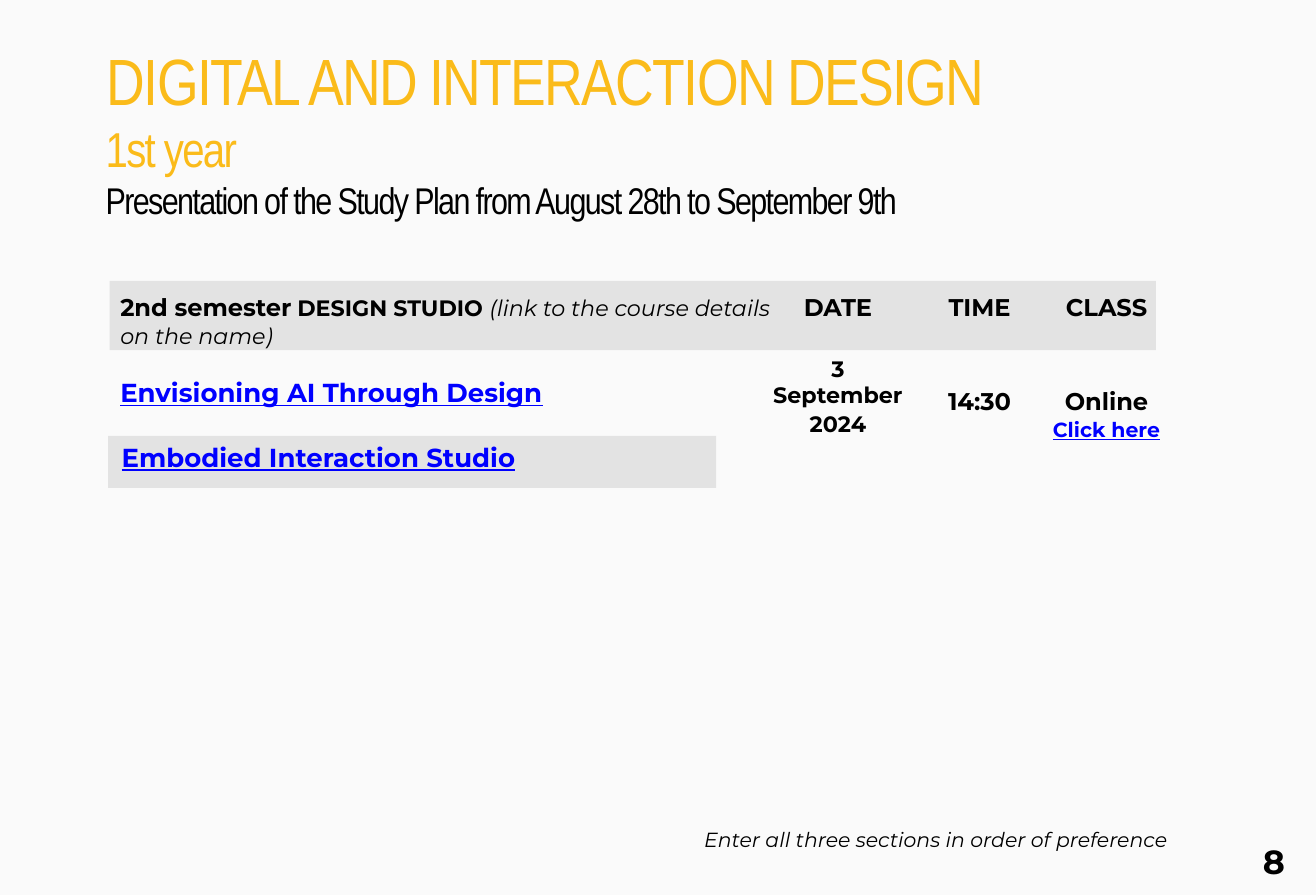
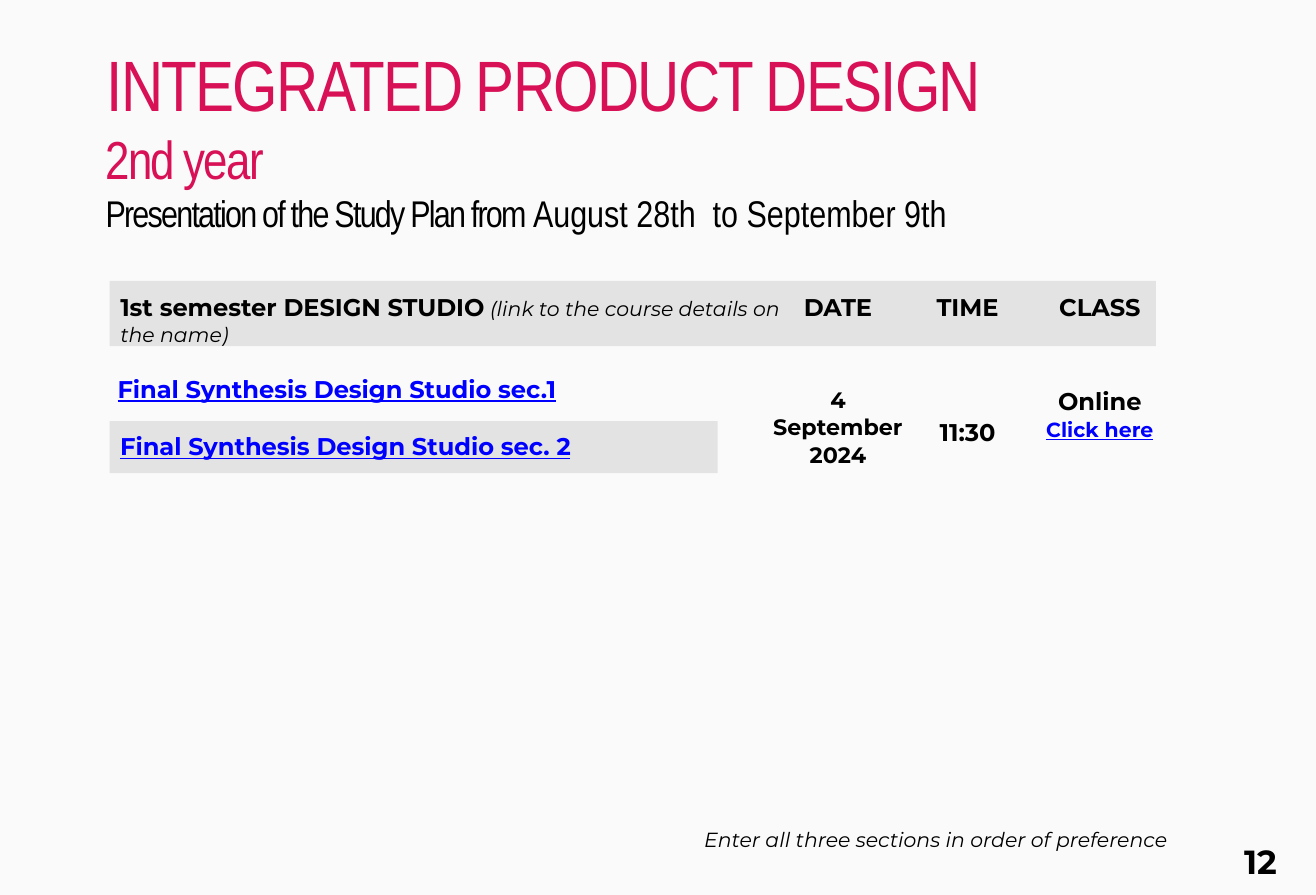
from copy import deepcopy
from dataclasses import dataclass

from pptx import Presentation
from pptx.dml.color import RGBColor
from pptx.enum.shapes import MSO_SHAPE
from pptx.enum.text import MSO_ANCHOR, MSO_AUTO_SIZE, PP_ALIGN
from pptx.util import Inches, Pt

RECT = MSO_SHAPE.RECTANGLE
TOP = MSO_ANCHOR.TOP
FIXED = MSO_AUTO_SIZE.NONE
LEFT, MID, RIGHT = PP_ALIGN.LEFT, PP_ALIGN.CENTER, PP_ALIGN.RIGHT

# Shared look
PAPER, BAND, INK, LINK = "FAFAFA", "E3E3E3", "000000", "0000FF"
HEAD, BODY = "Arial Narrow", "Montserrat"
WIDE, HIGH = 709 / 72, 482 / 72  # slide size, from whole points
ROW = 16.85  # height of one empty table line, in points


@dataclass
class Run:
    text: str
    size: float
    color: str = INK
    bold: bool = False
    slant: bool = False
    under: bool = False
    face: str = BODY
    track: float = 0
    wrap: bool = False  # a line break follows


@dataclass
class Para:
    runs: list[Run]
    align: PP_ALIGN = LEFT
    before: float = 1
    indent: float = 0


@dataclass
class Box:
    x: float
    y: float
    w: float
    h: float


@dataclass
class Course:
    name: str
    box: Box


@dataclass
class Page:
    title: Para
    bands: list[Box]
    label: list[Run]
    width: float  # of the label
    courses: list[Course]
    size: float  # of the course names
    date: str
    skip: int  # empty lines above the date
    time: str
    wait: int  # empty lines above the time
    time_x: float
    class_x: float
    number: str
    num_x: float


def rgb(code: str) -> RGBColor:
    return RGBColor.from_string(code)


def style(font, run: Run) -> None:
    font.name, font.size = run.face, Pt(run.size)
    font.bold, font.italic, font.underline = run.bold, run.slant, run.under
    font.color.rgb = rgb(run.color)


def write(frame, paras: list[Para]) -> None:
    frame.word_wrap = True
    frame.auto_size = FIXED
    frame.vertical_anchor = TOP
    frame.margin_left = frame.margin_right = 0
    frame.margin_top = frame.margin_bottom = 0
    for i, para in enumerate(paras):
        line = frame.add_paragraph() if i else frame.paragraphs[0]
        line.alignment, line.space_before = para.align, Pt(para.before)
        if para.indent:
            line._p.get_or_add_pPr().set("indent", str(Inches(para.indent)))
        for run in para.runs:
            part = line.add_run()
            part.text = run.text
            style(line.font if len(para.runs) == 1 else part.font, run)
            props = part._r.get_or_add_rPr()
            if run.track:
                props.set("spc", str(round(run.track * 100)))
            if run.wrap:  # the break keeps the size of its line
                line._p.add_br().append(deepcopy(props))


def place(shape, box: Box) -> None:
    shape.left, shape.top = Inches(box.x), Inches(box.y)
    shape.width, shape.height = Inches(box.w), Inches(box.h)


def add_text(slide, box: Box, paras: list[Para]) -> None:
    shape = slide.shapes.add_textbox(0, 0, 0, 0)
    place(shape, box)
    write(shape.text_frame, paras)


def add_band(slide, box: Box) -> None:
    band = slide.shapes.add_shape(RECT, 0, 0, 0, 0)
    place(band, box)
    band.shadow.inherit = False
    band.fill.solid()
    band.fill.fore_color.rgb = rgb(BAND)
    band.line.fill.background()


def cell(text: str, size: float = 13, skip: int = 0, link: bool = False) -> Para:
    """One centred line of a column, after some empty lines."""
    color = LINK if link else INK
    return Para([Run(text, size, color, True, under=link)], MID, 1 + skip * ROW)


def heading(name: str, year: str, size: float, color: str, track: float,
            plan: list[Run]) -> Para:
    """Title lines: course name, year at three quarters, study plan."""
    lines = [Run(text, high, color, face=HEAD, track=track, wrap=True)
             for text, high in ((name, size), (year, size * 0.75))]
    return Para(lines + plan, before=0, indent=0.01)


def plan(text: str, track: float = 0) -> Run:
    return Run(text, 20, face=HEAD, track=track)


def build(deck, page: Page) -> None:
    slide = deck.slides.add_slide(deck.slide_layouts[5])
    place(slide.shapes.title, Box(0.79, 0.3, 8.11, 1.53))
    write(slide.shapes.title.text_frame, [page.title])

    # Bands, semester label and course names
    for band in page.bands:
        add_band(slide, band)
    add_text(slide, Box(0.9, 2.19, page.width, 0.4), [Para(page.label)])
    for course in page.courses:
        run = Run(course.name, page.size, LINK, True, under=True)
        add_text(slide, course.box, [Para([run])])

    # Date, time and class columns
    columns = [
        (5.75, 1.04, [cell("DATE"), cell(page.date, 12, page.skip),
                      cell("2024", 12)]),
        (page.time_x, 1.04, [cell("TIME"), cell(page.time, skip=page.wait)]),
        (page.class_x, 0.94, [cell("CLASS"), cell("Online", skip=2),
                              cell("Click here", 11, link=True)]),
    ]
    for x, width, paras in columns:
        add_text(slide, Box(x, 2.19, width, 1.6), paras)

    # Footer
    note = Run("Enter all three sections in order of preference", 11, slant=True)
    add_text(slide, Box(3.32, 6.19, 5.42, 0.19), [Para([note], RIGHT)])
    number = Run(page.number, 18, bold=True)
    add_text(slide, Box(page.num_x, 6.29, 0.39, 0.31), [Para([number], before=2)])


HINT = "(link to the course details on the name)"

PAGES = [
    Page(
        title=heading(
            "DIGITAL AND INTERACTION DESIGN", "1st year", 35.2, "FABB1A", -0.88,
            [plan("Presentation of the Study Plan from August 28th to "
                  "September 9th", -0.88)]),
        bands=[Box(0.82, 2.1, 7.83, 0.52), Box(0.81, 3.26, 4.55, 0.39)],
        label=[Run("2nd semester", 13, bold=True), Run(" ", 12, slant=True),
               Run("DESIGN STUDIO ", 12, bold=True), Run(HINT, 12, slant=True)],
        width=5.11,
        courses=[
            Course("Envisioning AI Through Design", Box(0.9, 2.82, 4.38, 0.24)),
            Course("Embodied Interaction Studio", Box(0.91, 3.3, 4.38, 0.24))],
        size=14, date="3 September", skip=1, time="14:30", wait=2,
        time_x=6.81, class_x=7.81, number="8", num_x=9.45),
    Page(
        title=heading(
            "INTEGRATED PRODUCT DESIGN", "2nd year", 38.4, "D81056", -0.97,
            [plan("Presentation of the Study Plan from ", -0.97),
             plan("August 28th  to September 9th")]),
        bands=[Box(0.82, 2.1, 7.83, 0.49), Box(0.82, 3.15, 4.55, 0.39)],
        label=[Run("1st semester DESIGN STUDIO", 13, bold=True),
               Run(" ", 12, slant=True), Run(HINT, 11, slant=True)],
        width=5.02,
        courses=[
            Course("Final Synthesis Design Studio sec.1",
                   Box(0.88, 2.8, 4.33, 0.22)),
            Course("Final Synthesis Design Studio sec. 2",
                   Box(0.9, 3.23, 3.76, 0.22))],
        size=13, date="4 September", skip=2, time="11:30", wait=3,
        time_x=6.72, class_x=7.76, number="12", num_x=9.31),
]


def main() -> None:
    deck = Presentation()
    deck.slide_width, deck.slide_height = Inches(WIDE), Inches(HIGH)
    fill = deck.slide_master.background.fill
    fill.solid()
    fill.fore_color.rgb = rgb(PAPER)
    for page in PAGES:
        build(deck, page)
    deck.save("out.pptx")


if __name__ == "__main__":
    main()
